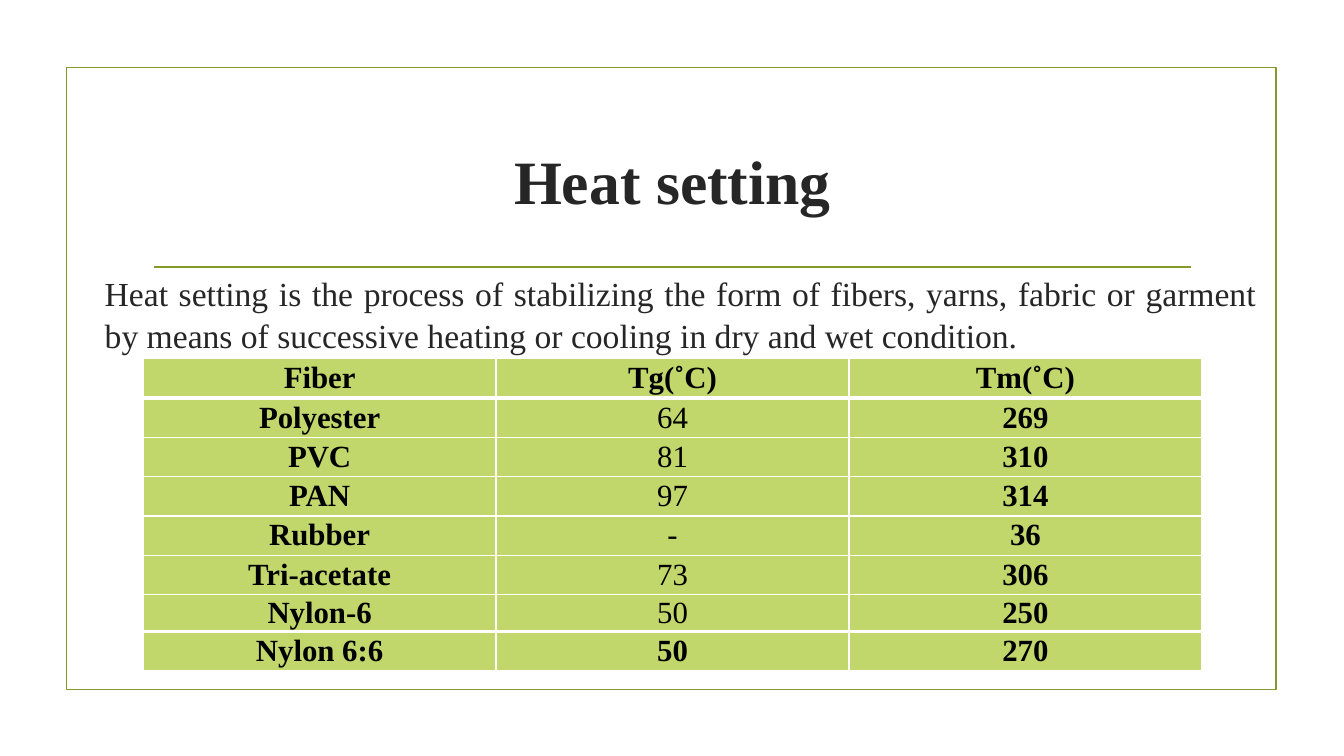
from lxml.etree import SubElement
from pptx import Presentation
from pptx.dml.color import RGBColor
from pptx.enum.shapes import MSO_CONNECTOR as Connector, MSO_SHAPE as Shape
from pptx.enum.text import MSO_ANCHOR as Anchor, PP_ALIGN as Align
from pptx.oxml.ns import qn
from pptx.util import Inches, Pt

FONT = "Times New Roman"
OLIVE = RGBColor(0x83, 0x99, 0x2A)
LIME = RGBColor(0xC1, 0xD6, 0x6B)
CHARCOAL = RGBColor(0x26, 0x26, 0x26)
BLACK = RGBColor(0, 0, 0)
WHITE = RGBColor(0xFF, 0xFF, 0xFF)

DEFINITION = (
    "Heat setting is the process of stabilizing the form of fibers, yarns, "
    "fabric or garment by means of successive heating or cooling in dry and "
    "wet condition."
)
FIBERS = [
    ("Fiber", "Tg(˚C)", "Tm(˚C)"),
    ("Polyester", "64", "269"),
    ("PVC", "81", "310"),
    ("PAN", "97", "314"),
    ("Rubber", "-", "36"),
    ("Tri-acetate", "73", "306"),
    ("Nylon-6", "50", "250"),
    ("Nylon 6:6", "50", "270"),
]
LAST_ROW = len(FIBERS) - 1
ROW_HEIGHT = 0.39
SHORT_ROW_HEIGHT = 0.35


def write(frame, text, size, color=CHARCOAL, bold=False, align=Align.CENTER,
          anchor=Anchor.MIDDLE, spacing=None):
    frame.word_wrap = True
    frame.vertical_anchor = anchor
    para = frame.paragraphs[0]
    para.alignment = align
    para.line_spacing = spacing
    span = para.add_run()
    span.text = text
    span.font.name = FONT
    span.font.size = Pt(size)
    span.font.bold = bold
    span.font.color.rgb = color


def add_frame(page):
    border = page.shapes.add_shape(
        Shape.RECTANGLE, Inches(0.66), Inches(0.67), Inches(12), Inches(6.17))
    border.shadow.inherit = False
    border.fill.background()
    border.line.color.rgb = OLIVE
    border.line.width = Pt(1.25)


def add_rule(page):
    rule = page.shapes.add_connector(
        Connector.STRAIGHT, Inches(1.53), Inches(2.65), Inches(11.81), Inches(2.65))
    rule.line.color.rgb = OLIVE
    rule.line.width = Pt(1.25)
    SubElement(rule._element.spPr, qn("a:effectLst"))


def add_title(page, text):
    title = page.shapes.title
    title.left, title.top = Inches(1.42), Inches(1.07)
    title.width, title.height = Inches(10.5), Inches(1.43)
    write(title.text_frame, text, 44, bold=True)


def add_body(page, text):
    box = page.shapes.add_textbox(
        Inches(0.94), Inches(2.64), Inches(11.62), Inches(4.18))
    write(box.text_frame, text, 24, align=Align.JUSTIFY, anchor=Anchor.TOP,
          spacing=1.04)


def set_borders(cell, top=1, bottom=1):
    properties = cell._tc.get_or_add_tcPr()
    for side, points in (("L", 1), ("R", 1), ("T", top), ("B", bottom)):
        line = SubElement(properties, qn(f"a:ln{side}"), w=str(Pt(points)))
        fill = SubElement(line, qn("a:solidFill"))
        SubElement(fill, qn("a:srgbClr"), val=str(WHITE))


def fill_cell(cell, text, bold, top, bottom):
    set_borders(cell, top, bottom)
    cell.fill.solid()
    cell.fill.fore_color.rgb = LIME
    cell.margin_left = cell.margin_right = Inches(0.07)
    cell.margin_top = cell.margin_bottom = 0
    cell.vertical_anchor = Anchor.MIDDLE
    write(cell.text_frame, text, 22, color=BLACK, bold=bold, anchor=Anchor.MIDDLE)


def add_fiber_table(page):
    table = page.shapes.add_table(
        len(FIBERS), len(FIBERS[0]), Inches(1.42), Inches(3.56),
        Inches(10.5), Inches(3.08)).table
    for column in table.columns:
        column.width = Inches(3.5)
    for i, values in enumerate(FIBERS):
        before_last = i == LAST_ROW - 1
        table.rows[i].height = Inches(SHORT_ROW_HEIGHT if before_last else ROW_HEIGHT)
        for j, value in enumerate(values):
            bold = j != 1 or i in (0, LAST_ROW)
            fill_cell(table.cell(i, j), value, bold,
                      top=3 if i in (1, LAST_ROW) else 1,
                      bottom=3 if i == 0 or before_last else 1)


def main():
    deck = Presentation()
    deck.slide_width, deck.slide_height = Inches(13.33), Inches(7.5)
    page = deck.slides.add_slide(deck.slide_layouts[5])
    add_frame(page)
    add_rule(page)
    add_title(page, "Heat setting")
    add_body(page, DEFINITION)
    add_fiber_table(page)
    deck.save("out.pptx")


if __name__ == "__main__":
    main()
